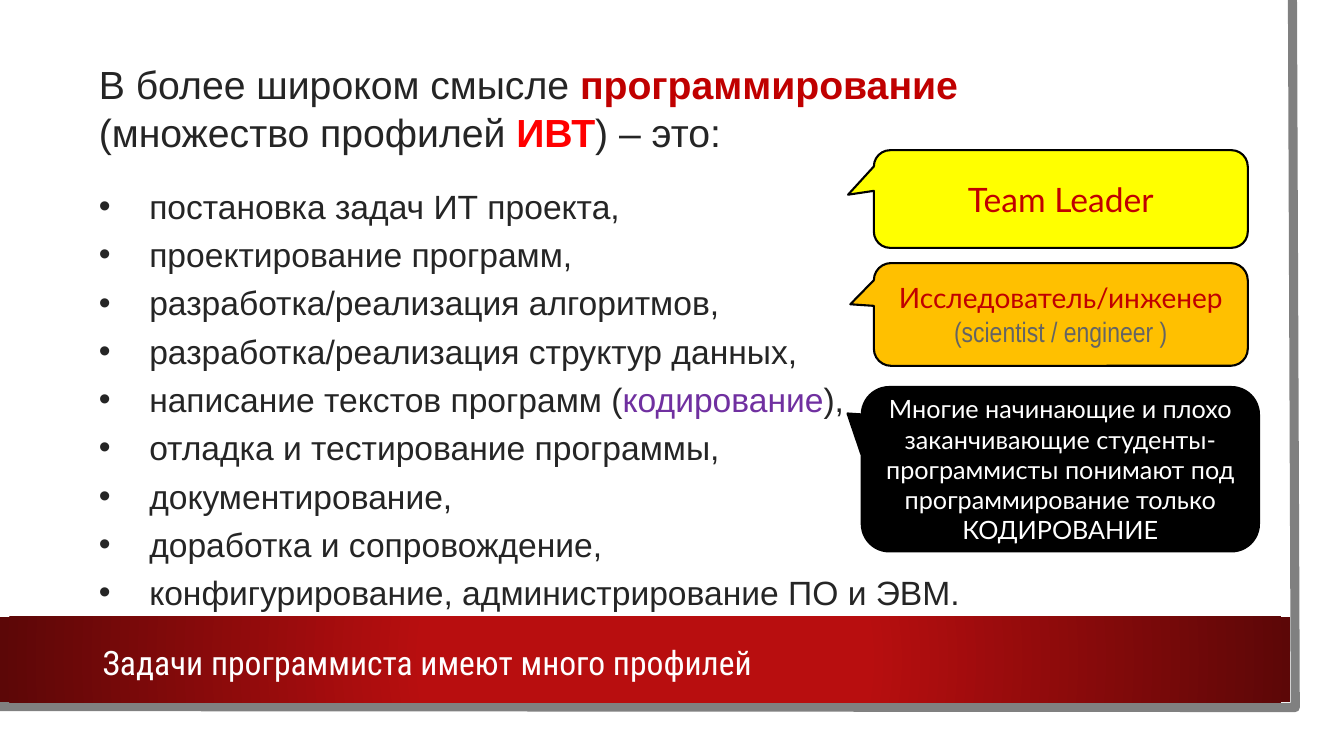
from pptx import Presentation
from pptx.dml.color import RGBColor
from pptx.enum.shapes import MSO_SHAPE
from pptx.enum.text import MSO_ANCHOR, MSO_AUTO_SIZE, PP_ALIGN
from pptx.oxml import parse_xml
from pptx.oxml.ns import nsdecls, qn
from pptx.util import Pt

RECTANGLE = MSO_SHAPE.RECTANGLE
CALLOUT = MSO_SHAPE.ROUNDED_RECTANGULAR_CALLOUT
TOP, MIDDLE = MSO_ANCHOR.TOP, MSO_ANCHOR.MIDDLE
NO_AUTOFIT = MSO_AUTO_SIZE.NONE
LEFT, CENTER = PP_ALIGN.LEFT, PP_ALIGN.CENTER

DARK, RED, BRIGHT_RED, PURPLE = "252525", "C00000", "FF0000", "7030A0"
WHITE, BLACK, GREY = "FFFFFF", "000000", "808080"

HEADING = [
    [("В более широком смысле ", DARK, False), ("программирование", RED, True)],
    [("(множество профилей ", DARK, False), ("ИВТ", BRIGHT_RED, True),
     (") – это:", DARK, False)],
]
TASKS = [
    [("постановка задач ИТ проекта,", DARK)],
    [("проектирование программ,", DARK)],
    [("разработка/реализация алгоритмов,", DARK)],
    [("разработка/реализация структур данных,", DARK)],
    [("написание текстов программ (", DARK), ("кодирование", PURPLE), ("),", DARK)],
    [("отладка и тестирование программы,", DARK)],
    [("документирование,", DARK)],
    [("доработка и сопровождение,", DARK)],
    [("конфигурирование, администрирование ПО и ЭВМ.", DARK)],
]
# Box, fill, pointer tip and lines (text, size, font, colour) of each callout
CALLOUTS = [
    ((615.6, 276.5, 283.7, 117.4), BLACK, (-0.536, -0.339), [
        ("Многие начинающие и плохо заканчивающие студенты-программисты "
         "понимают под программирование только КОДИРОВАНИЕ", 18, "Lato", WHITE)]),
    ((624.2, 107.3, 267.1, 69.8), "FFFF00", (-0.569, -0.044), [
        ("Team Leader", 24, "Lato", RED)]),
    ((624.2, 187.9, 267.1, 73.4), "FFC000", (-0.563, -0.099), [
        ("Исследователь/инженер", 20, "Lato", RED),
        ("(scientist / engineer )", 20, "Arial Narrow", "646464")]),
]


def color(value):
    return RGBColor.from_string(value)


def set_all(target, values):
    for name, value in values.items():
        setattr(target, name, value)


def add_span(para, text, size, font, shade, bold=False):
    span = para.add_run()
    span.text = text
    set_all(span.font, {"size": Pt(size), "name": font, "bold": bold})
    span.font.color.rgb = color(shade)


def place(shape, box):
    set_all(shape, dict(zip(("left", "top", "width", "height"), map(Pt, box))))


def add_frame(page, box):
    """Grey edge along the right and bottom, and the red banner."""
    left, top, width, height = box
    right, bottom = left + width, top + height
    builder = page.shapes.build_freeform(Pt(right - 2), Pt(top))
    builder.add_line_segments(
        [(Pt(right), Pt(bottom)), (Pt(left), Pt(bottom - 0.7))], close=False)
    edge = builder.convert_to_shape()
    edge.shadow.inherit = False
    edge.fill.background()
    edge.line.color.rgb = color(GREY)
    edge.line.width = Pt(6.5)

    banner = page.shapes.add_shape(
        RECTANGLE, Pt(left), Pt(bottom - 64.8), Pt(width - 3.6), Pt(61.2))
    banner.shadow.inherit = False
    banner.line.fill.background()
    gradient = parse_xml(
        f'<a:gradFill {nsdecls("a")} rotWithShape="1"><a:gsLst>'
        '<a:gs pos="34000"><a:srgbClr val="B80E0F"/></a:gs>'
        '<a:gs pos="100000"><a:srgbClr val="5C0707"/></a:gs></a:gsLst>'
        '<a:path path="circle">'
        '<a:fillToRect l="50000" t="50000" r="50000" b="50000"/>'
        '</a:path></a:gradFill>')
    banner.element.spPr.find(qn("a:prstGeom")).addnext(gradient)


def prepare_placeholder(shape, box):
    """Bring a placeholder in front of the frame and set up its text area."""
    place(shape, box)
    shape.element.getparent().append(shape.element)
    set_all(shape.text_frame, {"word_wrap": True, "auto_size": NO_AUTOFIT,
                               "vertical_anchor": TOP})
    return shape.text_frame


def add_heading(page, box):
    frame = prepare_placeholder(page.shapes.title, box)
    para = frame.paragraphs[0]
    set_all(para, {"alignment": LEFT, "line_spacing": Pt(34.3)})
    for number, line in enumerate(HEADING):
        if number:
            para.add_line_break()
        for text, shade, bold in line:
            add_span(para, text, 28, "Arial", shade, bold)


def add_tasks(page, box):
    frame = prepare_placeholder(page.placeholders[1], box)
    for number, spans in enumerate(TASKS):
        para = frame.add_paragraph() if number else frame.paragraphs[0]
        set_all(para, {"alignment": LEFT, "line_spacing": Pt(34.5),
                       "space_before": Pt(0)})
        properties = para._p.get_or_add_pPr()
        properties.set("marL", str(Pt(36)))
        properties.set("indent", str(-Pt(36)))
        properties.append(parse_xml(f'<a:buFont {nsdecls("a")} typeface="Arial"/>'))
        properties.append(parse_xml(f'<a:buChar {nsdecls("a")} char="•"/>'))
        for text, shade in spans:
            add_span(para, text, 24, "Arial", shade)


def add_callout(page, box, fill, tip, lines):
    callout = page.shapes.add_shape(CALLOUT, *map(Pt, box))
    callout.shadow.inherit = False
    callout.fill.solid()
    callout.fill.fore_color.rgb = color(fill)
    callout.line.color.rgb = color(BLACK)
    callout.line.width = Pt(1.5)
    for number, value in enumerate((*tip, 0.167)):
        callout.adjustments[number] = value
    frame = callout.text_frame
    set_all(frame, {"word_wrap": True, "vertical_anchor": MIDDLE})
    for number, line in enumerate(lines):
        para = frame.add_paragraph() if number else frame.paragraphs[0]
        para.alignment = CENTER
        add_span(para, *line)


def add_banner_text(page, box):
    label = page.shapes.add_textbox(*map(Pt, box))
    label.text_frame.word_wrap = False
    add_span(label.text_frame.paragraphs[0],
             "Задачи программиста имеют много профилей",
             24, "Roboto Condensed", WHITE)


def main():
    deck = Presentation()
    set_all(deck, {"slide_width": Pt(960), "slide_height": Pt(540)})
    page = deck.slides.add_slide(deck.slide_layouts[1])
    add_frame(page, (0, 0, 925.2, 505.4))
    add_heading(page, (63.4, 38.9, 828, 78))
    add_tasks(page, (63.4, 123.4, 828, 317))
    for callout in CALLOUTS:
        add_callout(page, *callout)
    add_banner_text(page, (66.2, 455, 506, 36))
    deck.save("out.pptx")


if __name__ == "__main__":
    main()
